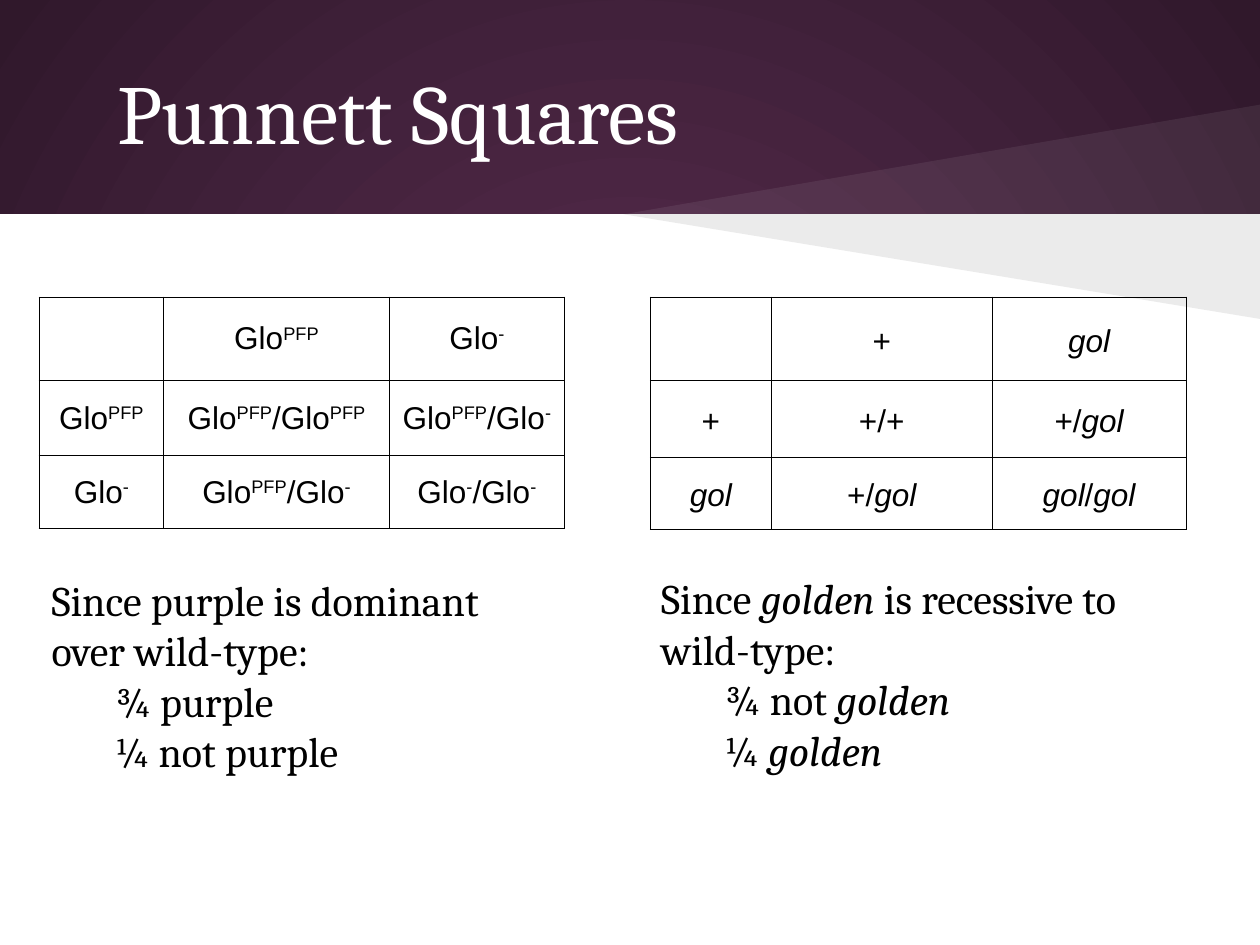
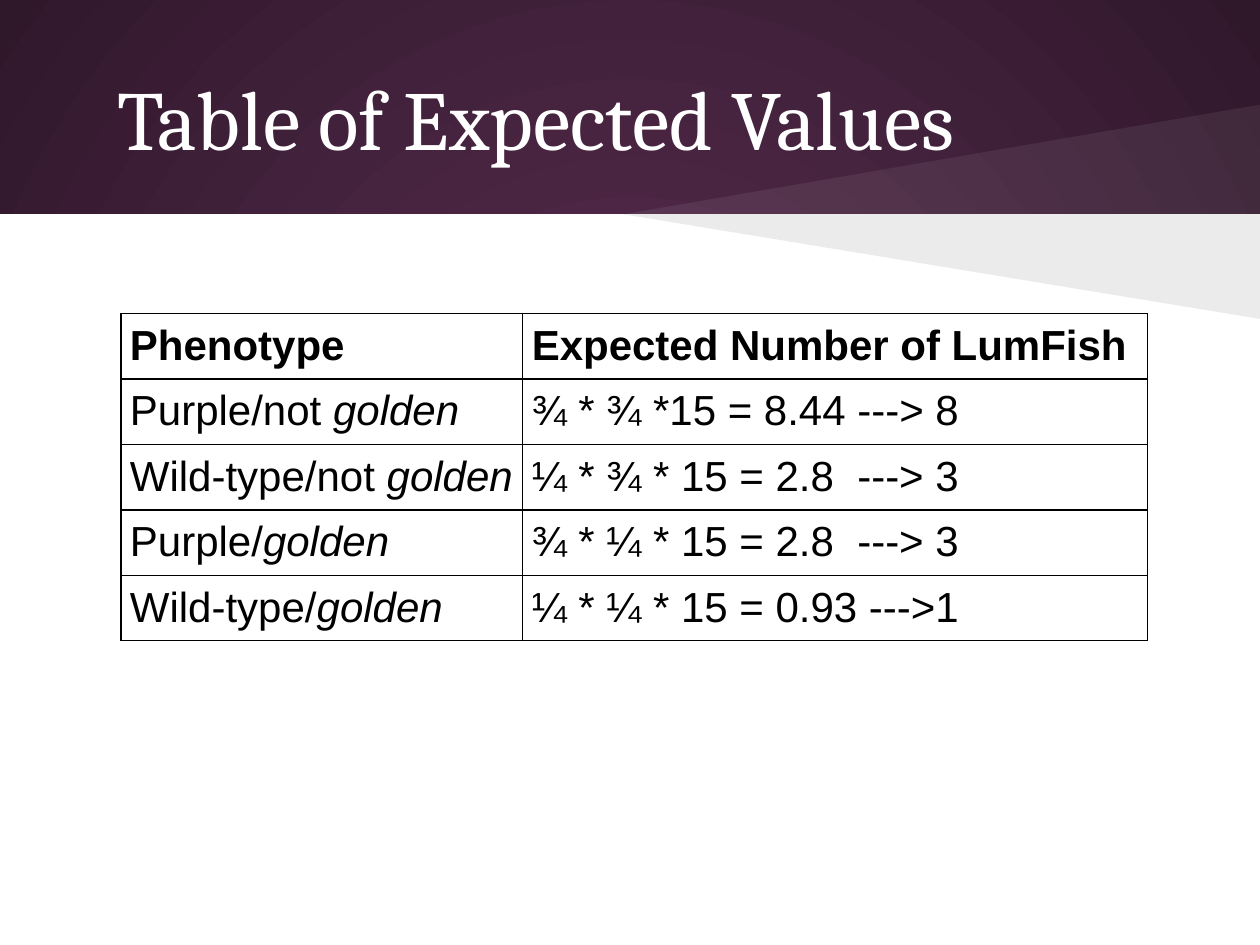
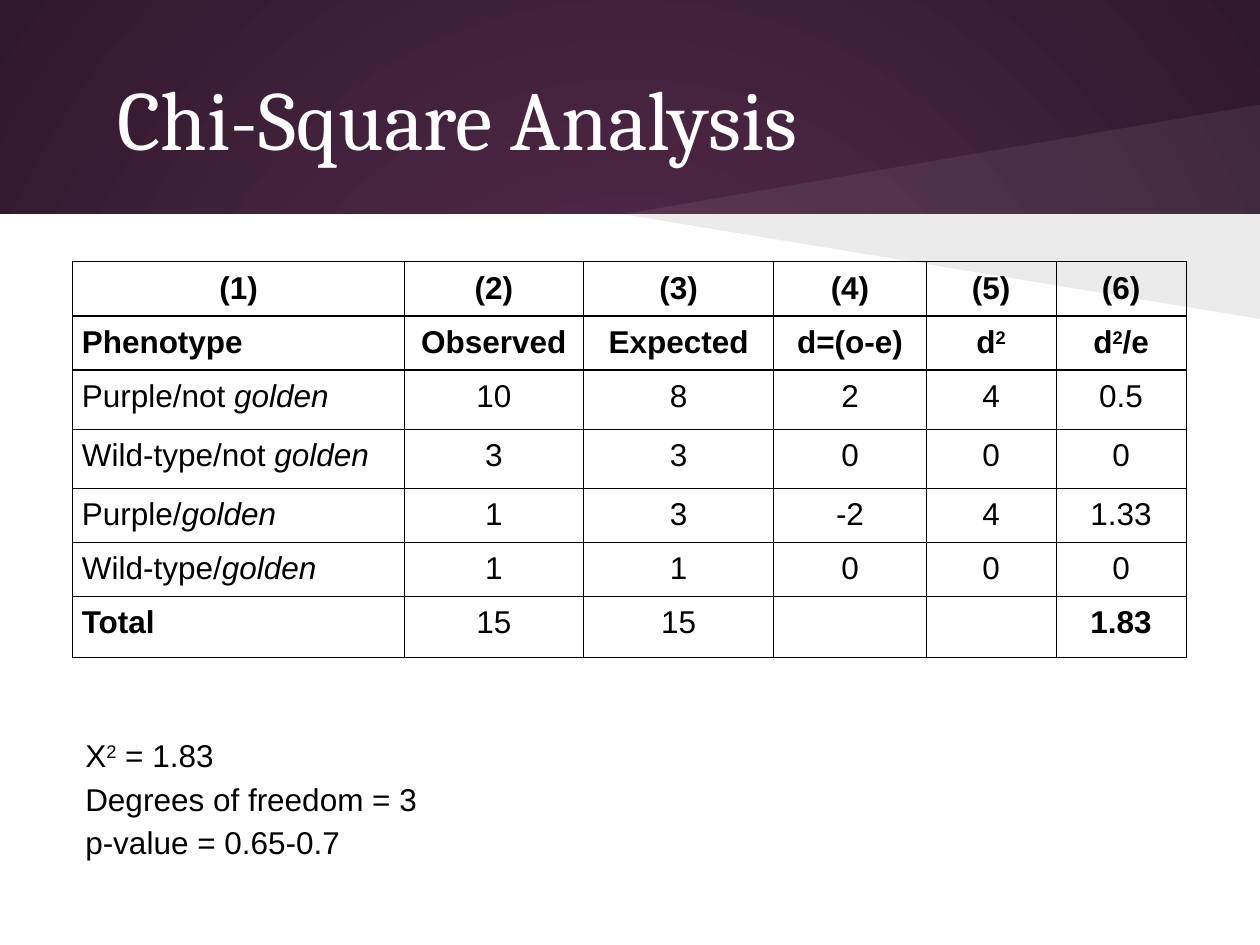
from lxml.etree import SubElement
from pptx import Presentation
from pptx.dml.color import RGBColor
from pptx.enum.shapes import MSO_SHAPE
from pptx.enum.text import MSO_ANCHOR, MSO_AUTO_SIZE, PP_ALIGN
from pptx.oxml.ns import qn
from pptx.util import Cm, Pt

COLORS = {
    "glow": "592D50",
    "night": "30182B",
    "white": "FFFFFF",
    "black": "000000",
}
TITLE_FONT, TABLE_FONT = "Cambria", "Arial"
WIDTH, HEIGHT, BAND_BOTTOM = 25.4, 19.05, 4.32
WEDGE_TIP, WEDGE_TOP, WEDGE_BOTTOM = 12.57, 2.11, 6.43
TEXT_INSET, CELL_INSET = 0.25, 0.18


def rgb(name):
    return RGBColor.from_string(COLORS[name])


class SlideBuilder:
    """Holds the shared style and the current slide."""

    def __init__(self, deck):
        self.deck = deck
        self.layout = deck.slide_layouts.get_by_name("Title Only")
        self.page = None

    # Shared backdrop, kept on the layout
    def backdrop(self):
        fill = self.layout.background.fill
        fill.gradient()
        for stop, name in zip(fill.gradient_stops, ("glow", "night")):
            stop.color.rgb = rgb(name)
        gradient = fill._xPr.find(qn("a:gradFill"))
        gradient.remove(gradient.find(qn("a:lin")))
        circle = SubElement(gradient, qn("a:path"), {"path": "circle"})
        sides = dict.fromkeys("ltrb", "50000")
        SubElement(circle, qn("a:fillToRect"), sides)

        panel = self.page.shapes.add_shape(
            MSO_SHAPE.RECTANGLE, 0, Cm(BAND_BOTTOM), Cm(WIDTH), Cm(HEIGHT - BAND_BOTTOM))
        self.paint(panel, "white")
        parts = [panel, self.wedge(WEDGE_TOP, "white", 7), self.wedge(WEDGE_BOTTOM, "black", 8)]
        for position, part in enumerate(parts, start=2):
            self.layout.shapes.element.insert(position, part.element)

    def wedge(self, far_edge, color, opacity):
        builder = self.page.shapes.build_freeform(Cm(WEDGE_TIP), Cm(BAND_BOTTOM))
        builder.add_line_segments(
            [(Cm(WIDTH), Cm(far_edge)), (Cm(WIDTH), Cm(BAND_BOTTOM))], close=True)
        shape = builder.convert_to_shape()
        self.paint(shape, color)
        fill_color = shape.element.spPr.find(qn("a:solidFill"))[0]
        SubElement(fill_color, qn("a:alpha"), val=str(opacity * 1000))
        return shape

    def paint(self, shape, color):
        shape.shadow.inherit = False
        shape.fill.solid()
        shape.fill.fore_color.rgb = rgb(color)
        shape.line.fill.background()

    # Text: "|" parts spans, "^" raises a span, "_" slants it, a leading "!" makes all bold
    def fill_para(self, para, text, font, size, color="black", indent=0, spacing=None,
                  align=PP_ALIGN.LEFT):
        para.alignment = align
        para.line_spacing = spacing
        para.font.name, para.font.size = font, Pt(size)
        para.font.color.rgb = rgb(color)
        para.font.bold = text.startswith("!")
        if indent:
            properties = para._p.get_or_add_pPr()
            properties.set("marL", "0")
            properties.set("indent", str(Cm(indent)))
        for piece in text.removeprefix("!").split("|"):
            span = para.add_run()
            span.text = piece.lstrip("^_")
            if piece.startswith("_"):
                span.font.italic = True
            elif piece.startswith("^"):
                span.font._element.set("baseline", "30000")

    def frame(self, box, anchor):
        frame = box.text_frame
        frame.word_wrap = True
        frame.auto_size = MSO_AUTO_SIZE.NONE
        frame.vertical_anchor = anchor
        frame.margin_left = frame.margin_right = Cm(TEXT_INSET)
        frame.margin_top = frame.margin_bottom = Cm(TEXT_INSET)
        return frame

    def slide(self, title, top=0.76):
        self.page = self.deck.slides.add_slide(self.layout)
        box = self.page.shapes.title
        box.left, box.top, box.width, box.height = Cm(1.27), Cm(top), Cm(22.86), Cm(3.18)
        frame = self.frame(box, MSO_ANCHOR.MIDDLE)
        self.fill_para(frame.paragraphs[0], title, TITLE_FONT, 48, "white", indent=0.84)

    def text(self, left, top, width, height, lines, font, size, indent=0, spacing=None):
        """Add one paragraph a line; all but the first take the indent."""
        box = self.page.shapes.add_textbox(Cm(left), Cm(top), Cm(width), Cm(height))
        frame = self.frame(box, MSO_ANCHOR.TOP)
        for number, line in enumerate(lines):
            para = frame.add_paragraph() if number else frame.paragraphs[0]
            self.fill_para(para, line, font, size, indent=indent if number else 0,
                           spacing=spacing)

    # Tables
    def table(self, left, top, widths, heights, rows, size=18, anchor=MSO_ANCHOR.TOP,
              spacing=None, centred=lambda row, column: True):
        table = self.page.shapes.add_table(
            len(heights), len(widths), Cm(left), Cm(top),
            Cm(sum(widths)), Cm(sum(heights))).table
        table.first_row = table.horz_banding = False
        for column, width in zip(table.columns, widths):
            column.width = Cm(width)
        for row, height in zip(table.rows, heights):
            row.height = Cm(height)
        for r, texts in enumerate(rows):
            for c, text in enumerate(texts):
                cell = table.cell(r, c)
                self.border(cell)
                cell.fill.background()
                cell.vertical_anchor = anchor
                cell.margin_left = cell.margin_right = Cm(CELL_INSET)
                cell.margin_top = cell.margin_bottom = Cm(CELL_INSET)
                if text:
                    align = PP_ALIGN.CENTER if centred(r, c) else PP_ALIGN.LEFT
                    self.fill_para(cell.text_frame.paragraphs[0], text, TABLE_FONT, size,
                                   spacing=spacing, align=align)

    def border(self, cell):
        properties = cell._tc.get_or_add_tcPr()
        for side in ("lnL", "lnR", "lnT", "lnB"):
            line = SubElement(properties, qn(f"a:{side}"), w=str(Pt(0.75)))
            fill = SubElement(line, qn("a:solidFill"))
            SubElement(fill, qn("a:srgbClr"), val=COLORS["black"])


def punnett_squares(slides):
    slides.slide("Punnett Squares", top=0.64)
    slides.backdrop()
    purple, plain = "Glo|^PFP", "Glo|^-"
    slides.table(
        0.79, 5.99, [2.51, 4.55, 3.53], [1.68, 1.52, 1.47],
        [["", purple, plain],
         [purple, f"{purple}|/{purple}", f"{purple}|/{plain}"],
         [plain, f"{purple}|/{plain}", f"{plain}|/{plain}"]],
        anchor=MSO_ANCHOR.MIDDLE)
    slides.table(
        13.11, 5.99, [2.44, 4.45, 3.91], [1.68, 1.55, 1.45],
        [["", "+", "_gol"],
         ["+", "+/+", "+/|_gol"],
         ["_gol", "+/|_gol", "_gol|/|_gol"]],
        anchor=MSO_ANCHOR.MIDDLE, spacing=1.15)
    slides.text(
        0.79, 11.33, 10.59, 5.26,
        ["Since purple is dominant over wild-type:", "¾ purple", "¼ not purple"],
        TITLE_FONT, 24, indent=1.27)
    slides.text(
        13.08, 11.3, 10.44, 4.8,
        ["Since |_golden| is recessive to wild-type:", "¾ not |_golden", "¼ |_golden"],
        TITLE_FONT, 24, indent=1.27)


PHENOTYPES = ["Purple/not |_golden", "Wild-type/not |_golden",
              "Purple/|_golden", "Wild-type/|_golden"]


def expected_values(slides):
    slides.slide("Table of Expected Values")
    products = ["¾ * ¾ *15 = 8.44 ---> 8", "¼ * ¾ * 15 = 2.8  ---> 3",
                "¾ * ¼ * 15 = 2.8  ---> 3", "¼ * ¼ * 15 = 0.93 --->1"]
    slides.table(
        2.44, 6.32, [8.1, 12.6], [1.32] * 5,
        [["!Phenotype", "!Expected Number of LumFish"], *zip(PHENOTYPES, products)],
        size=24, centred=lambda row, column: False)


def chi_square(slides):
    slides.slide("Chi-Square Analysis")
    results = [["10", "8", "2", "4", "0.5"],
               ["3", "3", "0", "0", "0"],
               ["1", "3", "-2", "4", "1.33"],
               ["1", "1", "0", "0", "0"]]
    slides.table(
        1.47, 5.28, [6.68, 3.61, 3.84, 3.07, 2.62, 2.62],
        [1.09, 1.09, 1.19, 1.19, 1.09, 1.09, 1.24],
        [[f"!({number})" for number in range(1, 7)],
         ["!Phenotype", "!Observed", "!Expected", "!d=(o-e)", "!d|^2", "!d|^2|/e"],
         *([name, *values] for name, values in zip(PHENOTYPES, results)),
         ["!Total", "15", "15", "", "", "!1.83"]],
        centred=lambda row, column: row == 0 or column > 0)
    slides.text(
        1.47, 14.48, 8.15, 3.02,
        ["X|^2| = 1.83", "Degrees of freedom = 3", "p-value = 0.65-0.7"],
        TABLE_FONT, 18, spacing=1.15)


def main():
    deck = Presentation()
    deck.slide_width, deck.slide_height = Cm(WIDTH), Cm(HEIGHT)
    slides = SlideBuilder(deck)
    punnett_squares(slides)
    expected_values(slides)
    chi_square(slides)
    deck.save("out.pptx")


if __name__ == "__main__":
    main()
